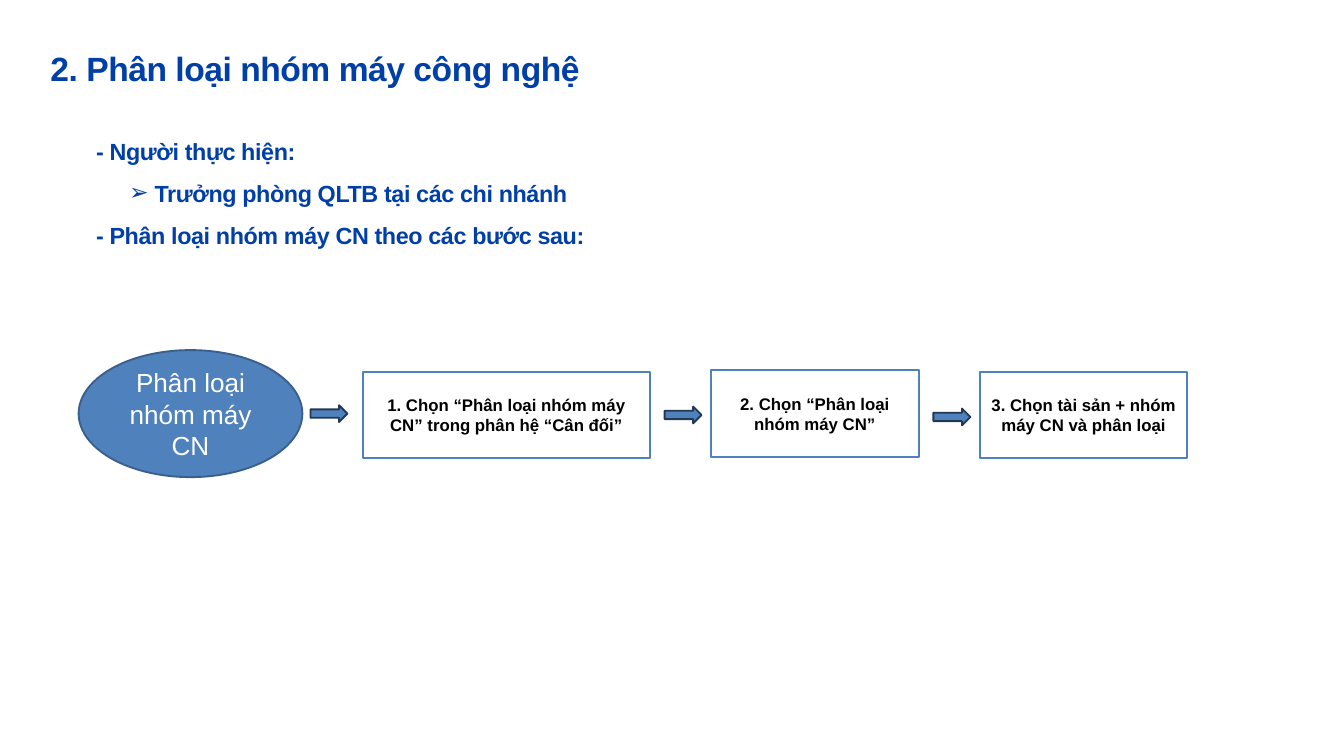
from lxml import etree
from pptx import Presentation
from pptx import util as u
from pptx.dml.color import RGBColor
from pptx.enum import shapes, text
from pptx.oxml.ns import qn

PX = 9144  # 100 px to the inch
BLUE, NAVY = "4F81BD", "003EA8"


def color(value):
    return RGBColor.from_string(value)


def write(paragraph, words, values, fill, spacing=0):
    """Add one run; spacing is in hundredths of a point."""
    run = paragraph.add_run()
    run.text = words
    for name, value in values.items():
        setattr(run.font, name, value)
    run.font.color.rgb = color(fill)
    if spacing:
        run.font._element.set("spc", str(spacing))


presentation = Presentation()
presentation.slide_width = 2000 * PX
presentation.slide_height = 1125 * PX
slide = presentation.slides.add_slide(presentation.slide_layouts[1])

# Title and list
title, body = slide.shapes.title, slide.placeholders[1]
flush = {"margin_left": 0, "margin_top": 0, "margin_right": 0, "margin_bottom": 0,
         "vertical_anchor": text.MSO_ANCHOR.TOP, "word_wrap": True,
         "auto_size": text.MSO_AUTO_SIZE.NONE}
for shape, box in ((title, (75, 71, 817, 58)), (body, (143, 183, 749, 245))):
    shape.left, shape.top, shape.width, shape.height = [n * PX for n in box]
    for name, value in flush.items():
        setattr(shape.text_frame, name, value)

paragraph = title.text_frame.paragraphs[0]
paragraph.alignment = text.PP_ALIGN.LEFT
paragraph.line_spacing = u.Pt(43.5)
write(paragraph, "2. Phân loại nhóm máy công nghệ",
      {"name": "Arial", "size": u.Pt(36), "bold": True}, NAVY, -50)

items = [
    (0, "- Người thực hiện:"),
    (1, "Trưởng phòng QLTB tại các chi nhánh"),
    (0, "- Phân loại nhóm máy CN theo các bước sau:"),
]
for index, (level, words) in enumerate(items):
    frame = body.text_frame
    paragraph = frame.add_paragraph() if index else frame.paragraphs[0]
    paragraph.level = level
    paragraph.line_spacing = 1.5
    paragraph.space_before = u.Pt(0)
    write(paragraph, words, {"name": "Arial", "size": u.Pt(25), "bold": True}, NAVY, -40)
    properties = paragraph._p.get_or_add_pPr()
    properties.set("marL", str(87 * PX * level))
    properties.set("indent", str(-38 * PX * level))
    if level:
        etree.SubElement(properties, qn("a:buFont")).set("typeface", "Arial")
        etree.SubElement(properties, qn("a:buChar")).set("char", "➢")
    else:
        etree.SubElement(properties, qn("a:buNone"))

# Process flow: start ellipse, then an arrow before each step
kind = shapes.MSO_SHAPE
start = {"size": u.Pt(28), "bold": False}
step = {"size": u.Pt(18), "bold": True}
flow = [
    (kind.OVAL, (117, 521, 333, 189), BLUE, "3A5F8C", "Phân loại nhóm máy CN", start, "FFFFFF"),
    (kind.RECTANGLE, (540, 553, 427, 129), "FFFFFF", BLUE,
     "1. Chọn “Phân loại nhóm máy CN” trong phân hệ “Cân đối”", step, "000000"),
    (kind.RECTANGLE, (1058, 551, 309, 129), "FFFFFF", BLUE,
     "2. Chọn “Phân loại nhóm máy CN”", step, "000000"),
    (kind.RECTANGLE, (1458, 553, 309, 129), "FFFFFF", BLUE,
     "3. Chọn tài sản + nhóm máy CN và phân loại", step, "000000"),
]
for left, top in ((462, 603), (989, 605), (1389, 608)):
    flow.append((kind.RIGHT_ARROW, (left, top, 55, 25), BLUE, "233953", "", {}, ""))

for preset, box, fill, line, words, values, ink in flow:
    shape = slide.shapes.add_shape(preset, *[n * PX for n in box])
    shape.shadow.inherit = False
    shape.fill.solid()
    shape.fill.fore_color.rgb = color(fill)
    shape.line.color.rgb = color(line)
    shape.line.width = u.Pt(2)
    if words:
        shape.text_frame.word_wrap = True
        shape.text_frame.vertical_anchor = text.MSO_ANCHOR.MIDDLE
        paragraph = shape.text_frame.paragraphs[0]
        paragraph.alignment = text.PP_ALIGN.CENTER
        write(paragraph, words, {"name": "Arial", **values}, ink)

presentation.save("out.pptx")
